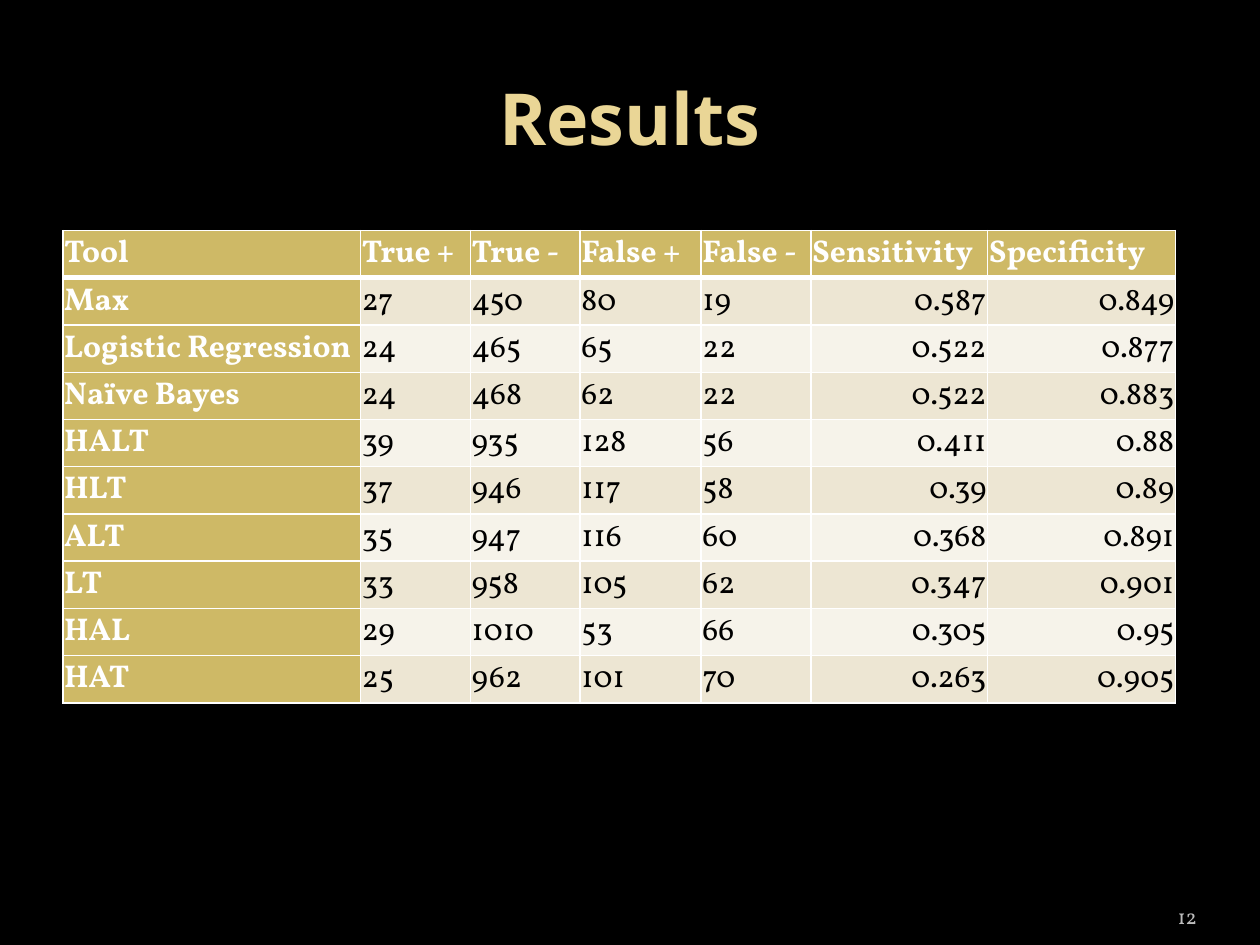
import dataclasses

import lxml.etree
import pptx
import pptx.dml.color
import pptx.enum.text
import pptx.oxml.ns
import pptx.util

Inches = pptx.util.Inches
Align = pptx.enum.text.PP_ALIGN
Anchor = pptx.enum.text.MSO_ANCHOR


@dataclasses.dataclass(frozen=True)
class Theme:
    background: str = "000000"
    title: str = "EAD696"
    accent: str = "CEB966"
    bands: tuple = ("EDE6D3", "F6F3EA")
    light: str = "FFFFFF"
    dark: str = "000000"
    muted: str = "BDBDBD"
    title_font: str = "Open Sans"
    body_font: str = "Vollkorn"
    title_size: int = 41
    table_size: int = 18
    number_size: int = 12
    rule: int = 1
    header_rule: int = 3


THEME = Theme()

COLUMN_WIDTHS = (2.36, 0.87, 0.87, 0.96, 0.87, 1.4, 1.49)
FIRST_RATE_COLUMN = 5
RESULTS = (
    ("Tool", "True +", "True -", "False +", "False -", "Sensitivity", "Specificity"),
    ("Max", "27", "450", "80", "19", "0.587", "0.849"),
    ("Logistic Regression", "24", "465", "65", "22", "0.522", "0.877"),
    ("Naïve Bayes", "24", "468", "62", "22", "0.522", "0.883"),
    ("HALT", "39", "935", "128", "56", "0.411", "0.88"),
    ("HLT", "37", "946", "117", "58", "0.39", "0.89"),
    ("ALT", "35", "947", "116", "60", "0.368", "0.891"),
    ("LT", "33", "958", "105", "62", "0.347", "0.901"),
    ("HAL", "29", "1010", "53", "66", "0.305", "0.95"),
    ("HAT", "25", "962", "101", "70", "0.263", "0.905"),
)


def rgb(color):
    return pptx.dml.color.RGBColor.from_string(color)


def write(frame, text, *, size, color, font=THEME.body_font, bold=False, align=Align.LEFT):
    para = frame.paragraphs[0]
    para.alignment = align
    span = para.add_run()
    span.text = text
    span.font.name = font
    span.font.size = pptx.util.Pt(size)
    span.font.bold = bold
    span.font.color.rgb = rgb(color)


def set_margins(target, left, top, right, bottom):
    target.margin_left, target.margin_top = Inches(left), Inches(top)
    target.margin_right, target.margin_bottom = Inches(right), Inches(bottom)


def set_borders(cell, color, **widths):
    """Draw cell edges, named L, R, T and B, in points; call before filling the cell."""
    properties = cell._tc.get_or_add_tcPr()
    for side, width in widths.items():
        line = lxml.etree.SubElement(
            properties, pptx.oxml.ns.qn(f"a:ln{side}"), w=str(pptx.util.Pt(width)))
        fill = lxml.etree.SubElement(line, pptx.oxml.ns.qn("a:solidFill"))
        lxml.etree.SubElement(fill, pptx.oxml.ns.qn("a:srgbClr"), val=color)


def add_title(page, text, left, top, width, height):
    box = page.shapes.title
    box.left, box.top = Inches(left), Inches(top)
    box.width, box.height = Inches(width), Inches(height)
    box.text_frame.vertical_anchor = Anchor.MIDDLE
    write(box.text_frame, text, size=THEME.title_size, color=THEME.title,
          font=THEME.title_font, bold=True, align=Align.CENTER)


def format_cell(cell, text, row, column):
    is_header = row == 0
    is_label = is_header or column == 0
    is_rate = not is_header and column >= FIRST_RATE_COLUMN
    set_borders(cell, THEME.light, L=THEME.rule, R=THEME.rule,
                T=THEME.header_rule if row == 1 else THEME.rule,
                B=THEME.header_rule if is_header else THEME.rule)
    cell.fill.solid()
    cell.fill.fore_color.rgb = rgb(THEME.accent if is_label else THEME.bands[(row - 1) % 2])
    cell.vertical_anchor = Anchor.MIDDLE
    set_margins(cell, 0.01, 0.01, 0.01, 0)
    write(cell.text_frame, text, size=THEME.table_size, bold=is_label,
          color=THEME.light if is_label else THEME.dark,
          align=Align.RIGHT if is_rate else Align.LEFT)


def add_results_table(page, left, top, width, height):
    table = page.shapes.add_table(
        len(RESULTS), len(COLUMN_WIDTHS),
        Inches(left), Inches(top), Inches(width), Inches(height)).table
    table.first_col = True
    for column, share in zip(table.columns, COLUMN_WIDTHS):
        column.width = Inches(width * share / sum(COLUMN_WIDTHS))
    for row, values in enumerate(RESULTS):
        table.rows[row].height = Inches(height / len(RESULTS))
        for column, text in enumerate(values):
            format_cell(table.cell(row, column), text, row, column)


def add_page_number(page, text, left, top, width, height):
    box = page.shapes.add_textbox(Inches(left), Inches(top), Inches(width), Inches(height))
    frame = box.text_frame
    frame.word_wrap = True
    frame.vertical_anchor = Anchor.BOTTOM
    set_margins(frame, 0, 0.05, 0, 0.05)
    write(frame, text, size=THEME.number_size, color=THEME.muted, align=Align.RIGHT)


def main():
    deck = pptx.Presentation()
    deck.slide_width, deck.slide_height = Inches(10), Inches(7.5)
    page = deck.slides.add_slide(deck.slide_layouts.get_by_name("Title Only"))
    page.background.fill.solid()
    page.background.fill.fore_color.rgb = rgb(THEME.background)
    add_title(page, "Results", 0.5, 0.3, 9, 1.25)
    add_results_table(page, 0.5, 1.83, 8.83, 3.75)
    add_page_number(page, "12", 8.67, 7.02, 0.83, 0.4)
    deck.save("out.pptx")


if __name__ == "__main__":
    main()
